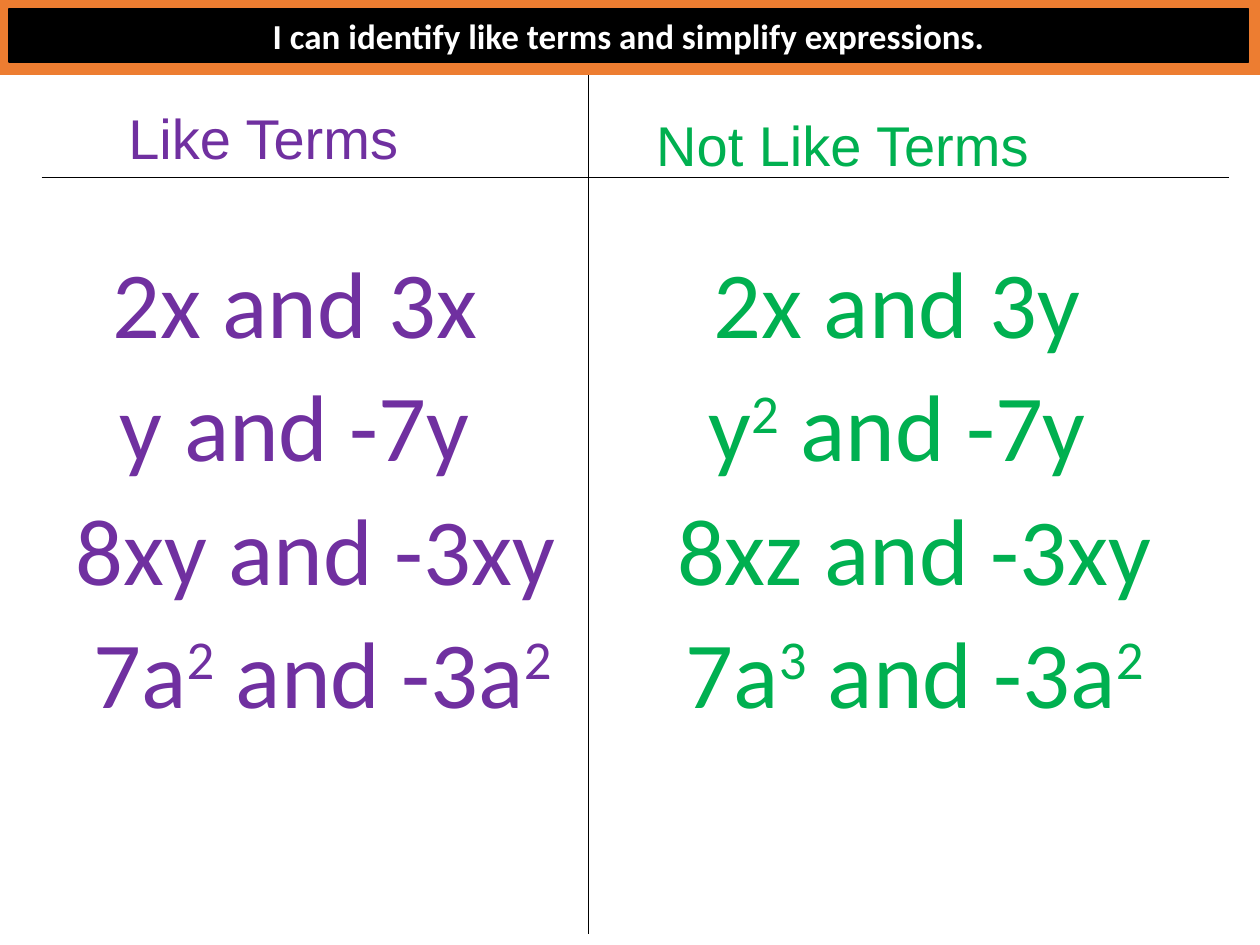
from pptx import Presentation
from pptx.dml.color import RGBColor
from pptx.enum.shapes import MSO_CONNECTOR as Connector, MSO_SHAPE as Shape
from pptx.enum.text import MSO_ANCHOR as Anchor, MSO_AUTO_SIZE as AutoSize, PP_ALIGN as Align
from pptx.oxml.xmlchemy import OxmlElement
from pptx.util import Inches, Pt

COLORS = {
    "orange": "ED7D31",
    "black": "000000",
    "white": "FFFFFF",
    "purple": "7030A0",
    "green": "00B050",
}
ROW_STEP = 0.977
ROW_WIDTHS = (3.76, 3.76, 4.09, 4.2)


def color(name):
    return RGBColor.from_string(COLORS[name])


def style_text(para, size, font, color_name, align=None, bold=None):
    para.alignment = align
    para.font.size = Pt(size)
    para.font.name = font
    para.font.bold = bold
    para.font.color.rgb = color(color_name)


def add_expression(para, expression):
    """Write the text, raising each single digit that follows a caret."""
    first, *powers = expression.split("^")
    para.add_run().text = first
    for part in powers:
        span = para.add_run()
        span.text = part[0]
        span._r.get_or_add_rPr().set("baseline", "30000")
        if part[1:]:
            para.add_run().text = part[1:]


def add_text(page, left, top, width, height, text, **style):
    box = page.shapes.add_textbox(Inches(left), Inches(top), Inches(width), Inches(height))
    box.text_frame.word_wrap = True
    box.text_frame.auto_size = AutoSize.SHAPE_TO_FIT_TEXT
    para = box.text_frame.paragraphs[0]
    add_expression(para, text)
    style_text(para, **style)


def add_bar(page, left, top, width, height, color_name):
    bar = page.shapes.add_shape(
        Shape.RECTANGLE, Inches(left), Inches(top), Inches(width), Inches(height))
    bar.shadow.inherit = False
    bar.fill.solid()
    bar.fill.fore_color.rgb = color(color_name)
    bar.line.color.rgb = color(color_name)
    bar.line.width = Pt(1)
    return bar


def add_rule(page, x1, y1, x2, y2):
    rule = page.shapes.add_connector(
        Connector.STRAIGHT, Inches(x1), Inches(y1), Inches(x2), Inches(y2))
    rule.line.color.rgb = color("black")
    rule.line.width = Pt(0.5)
    rule._element.spPr.append(OxmlElement("a:effectLst"))


def add_dividers(page, left, top, width, height):
    add_rule(page, left, top + 0.83, left + width, top + 0.83)
    add_rule(page, left + 4.34, top, left + 4.34, top + height)


def add_banner(page, left, top, width, height, goal):
    add_bar(page, left, top, width, height, "orange")
    label = add_bar(page, left + 0.07, top + 0.07, width - 0.16, height - 0.17, "black")
    label.text_frame.word_wrap = True
    label.text_frame.vertical_anchor = Anchor.MIDDLE
    para = label.text_frame.paragraphs[0]
    para.text = goal
    style_text(para, 20, "Calibri", "white", Align.CENTER, bold=True)


def add_heading(page, left, top, width, text, color_name):
    add_text(page, left, top, width, 0.64, text,
             size=32, font="Arial", color_name=color_name)


def add_pairs(page, left, top, color_name, pairs):
    """Stack the pairs; each comes with its own shift from the left edge."""
    for row, ((text, shift), width) in enumerate(zip(pairs, ROW_WIDTHS)):
        add_text(page, left + shift, top + row * ROW_STEP, width, 1.01, text,
                 size=54, font="Calibri", color_name=color_name, align=Align.CENTER)


def main():
    deck = Presentation()
    deck.slide_width, deck.slide_height = Inches(10), Inches(7.5)
    page = deck.slides.add_slide(deck.slide_layouts[6])

    # Two-column frame and headings
    add_dividers(page, 0.33, 0.58, 9.42, 6.83)
    add_heading(page, 0.92, 0.77, 4.29, "Like Terms", "purple")
    add_heading(page, 5.11, 0.83, 4.74, "Not Like Terms", "green")

    # Learning goal
    add_banner(page, 0, 0, 10, 0.59, "I can identify like terms and simplify expressions.")

    # Examples in each column
    add_pairs(page, 0.46, 1.89, "purple", [
        ("2x and 3x", 0), ("y and -7y", 0), ("8xy and -3xy", 0), ("7a^2 and -3a^2", 0)])
    add_pairs(page, 5.24, 1.89, "green", [
        ("2x and 3y", 0), ("y^2 and -7y", 0), ("8xz and -3xy", -0.03), ("7a^3 and -3a^2", -0.08)])

    deck.save("out.pptx")


if __name__ == "__main__":
    main()
